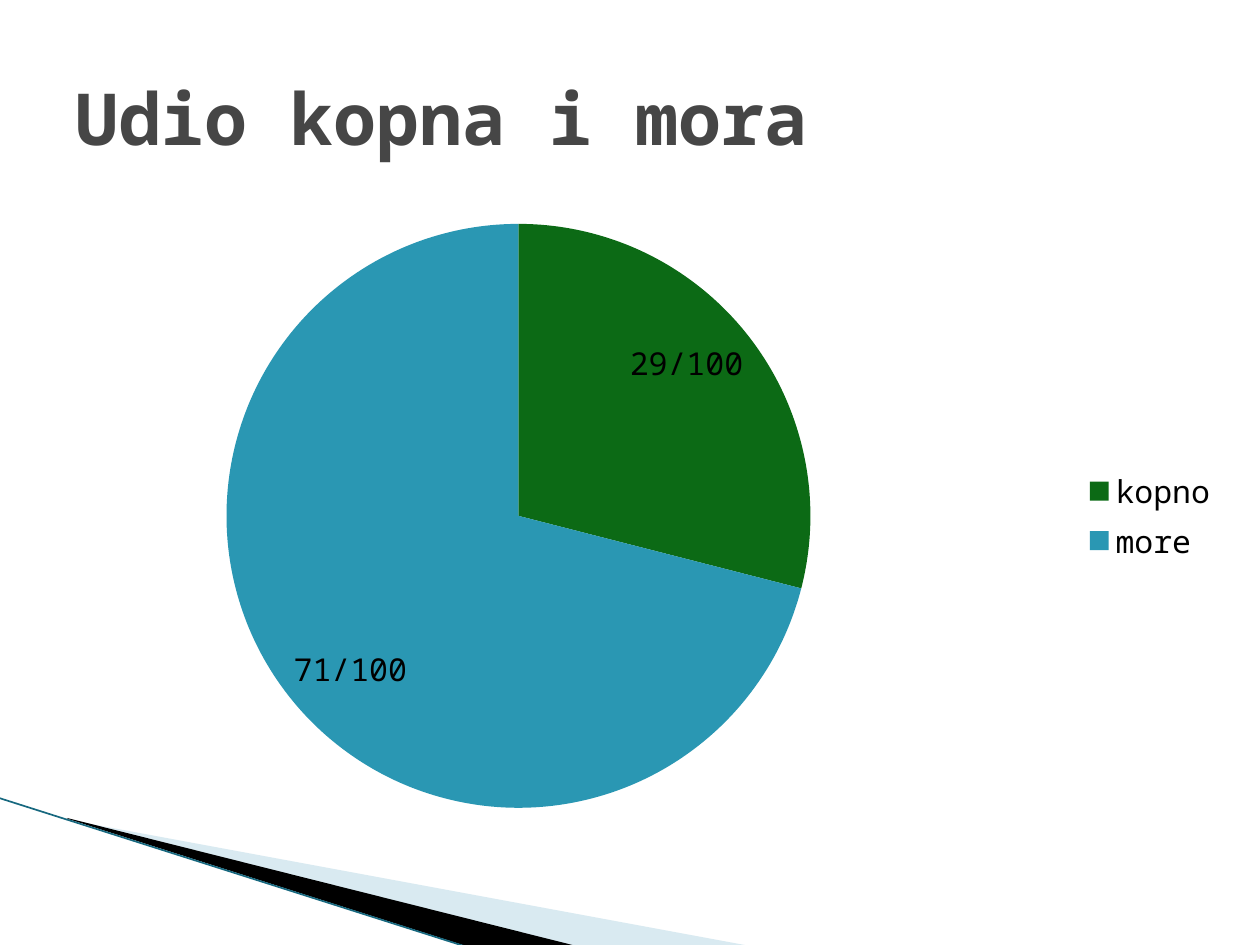
"""Build a slide with a pie chart of the shares of land and sea."""
from lxml import etree
from pptx import Presentation
from pptx.chart.data import CategoryChartData
from pptx.dml.color import RGBColor
from pptx.enum.chart import XL_CHART_TYPE as ChartType
from pptx.enum.chart import XL_LABEL_POSITION as LabelPosition
from pptx.enum.chart import XL_LEGEND_POSITION as LegendPosition
from pptx.enum.shapes import MSO_CONNECTOR as Connector
from pptx.enum.text import MSO_ANCHOR as Anchor
from pptx.enum.text import PP_ALIGN as Align
from pptx.oxml import parse_xml
from pptx.oxml.ns import nsdecls, qn
from pptx.util import Emu, Pt

SCALE = 914400 / 126
FONT = "Noto Sans Mono"
BLACK = RGBColor(0, 0, 0)
GREY = RGBColor(0x46, 0x46, 0x46)
PALE_BLUE = RGBColor(0xA0, 0xCB, 0xDC)
TEAL = RGBColor(0x17, 0x68, 0x7F)
GREEN = RGBColor(0x0C, 0x6A, 0x15)
SEA_BLUE = RGBColor(0x2A, 0x97, 0xB3)


def px(*lengths):
    return [Emu(round(length * SCALE)) for length in lengths]


def apply(target, values):
    for key, value in values.items():
        setattr(target, key, value)


prs = Presentation()
prs.slide_width, prs.slide_height = px(1260, 945)
slide = prs.slides.add_slide(prs.slide_layouts[5])
shapes = slide.shapes

wedges = [
    (PALE_BLUE, 40, [(69, 820), (750, 946), (575, 946), (69, 819)]),
    (BLACK, 100, [(67, 818), (576, 946), (469, 947), (68, 819)]),
]
for color, opacity, (start, *corners) in wedges:
    outline = shapes.build_freeform(*start, scale=SCALE)
    outline.add_line_segments(corners, close=True)
    wedge = outline.convert_to_shape()
    wedge.shadow.inherit = False
    wedge.line.fill.background()
    wedge.fill.solid()
    wedge.fill.fore_color.rgb = color
    if opacity < 100:
        tint = wedge.fill._xPr.find(".//" + qn("a:srgbClr"))
        etree.SubElement(tint, qn("a:alpha"), val=str(opacity * 1000))

edge = shapes.add_connector(Connector.STRAIGHT, *px(-1, 798, 467, 947))
edge.line.color.rgb = TEAL
edge.line.width = Pt(0.95)
etree.SubElement(edge._element.spPr, qn("a:effectLst"))

title = shapes.title
apply(title, dict(zip(("left", "top", "width", "height"), px(63, 38, 1134, 157))))
title.text_frame.text = "Udio kopna i mora"
title.text_frame.vertical_anchor = Anchor.MIDDLE
heading = title.text_frame.paragraphs[0]
heading.alignment = Align.LEFT
apply(heading.runs[0].font, {"name": FONT, "size": Pt(41), "bold": True})
heading.runs[0].font.color.rgb = GREY

shares = CategoryChartData()
shares.categories = ["kopno", "more"]
shares.add_series("Series 1", (29, 71))
chart = shapes.add_chart(ChartType.PIE, *px(63, 204, 1168, 624), shares).chart
apply(chart, {"has_title": False, "has_legend": True})
apply(chart.legend, {"position": LegendPosition.RIGHT, "include_in_layout": False})
apply(chart.font, {"name": FONT, "size": Pt(18)})
chart.font.color.rgb = BLACK

pie = chart.plots[0]
apply(pie, {"vary_by_categories": True, "has_data_labels": True})
apply(pie.data_labels, {"show_value": True, "position": LabelPosition.INSIDE_END})
for index, (color, share) in enumerate([(GREEN, "29/100"), (SEA_BLUE, "71/100")]):
    point = pie.series[0].points[index]
    point.format.fill.solid()
    point.format.fill.fore_color.rgb = color
    label = point.data_label
    label.text_frame.text = share
    label.position = LabelPosition.INSIDE_END
    label_font = label.text_frame.paragraphs[0].runs[0].font
    apply(label_font, {"name": FONT, "size": Pt(18)})
    label_font.color.rgb = BLACK

plot_area = chart._chartSpace.chart.plotArea
for old_layout in plot_area.findall(qn("c:layout")):
    plot_area.remove(old_layout)
frame = {"x": 0.14, "y": 0.03, "w": 0.5, "h": 0.94}
places = "".join(f'<c:{side} val="{value}"/>' for side, value in frame.items())
plot_area.insert(0, parse_xml(
    f'<c:layout {nsdecls("c")}><c:manualLayout><c:layoutTarget val="inner"/>'
    f'<c:xMode val="edge"/><c:yMode val="edge"/>{places}</c:manualLayout></c:layout>'))
chart._chartSpace.chart.addnext(parse_xml(
    f'<c:spPr {nsdecls("c", "a")}><a:noFill/><a:ln><a:noFill/></a:ln></c:spPr>'))

prs.save("out.pptx")
